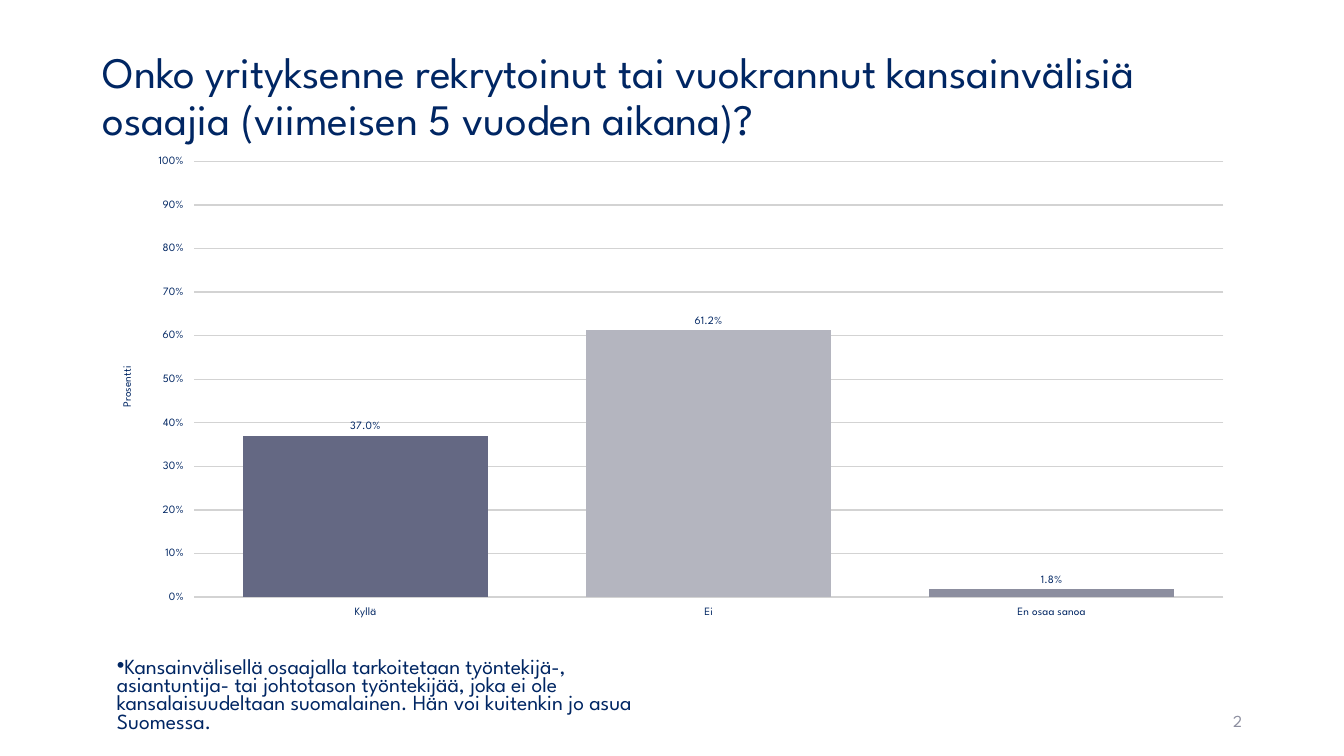
from dataclasses import dataclass

from lxml import etree
from pptx import Presentation
from pptx.chart.data import CategoryChartData
from pptx.dml.color import RGBColor
from pptx.enum.chart import XL_CHART_TYPE, XL_LABEL_POSITION, XL_TICK_MARK
from pptx.enum.text import MSO_ANCHOR, MSO_AUTO_SIZE, PP_ALIGN
from pptx.oxml.ns import qn
from pptx.util import Inches, Pt

COLUMNS = XL_CHART_TYPE.COLUMN_CLUSTERED
OUTSIDE_END = XL_LABEL_POSITION.OUTSIDE_END
TICK_OUT = XL_TICK_MARK.OUTSIDE
TOP, MIDDLE = MSO_ANCHOR.TOP, MSO_ANCHOR.MIDDLE
NO_AUTOFIT = MSO_AUTO_SIZE.NONE
LEFT, RIGHT = PP_ALIGN.LEFT, PP_ALIGN.RIGHT

QUESTION = "Onko yrityksenne rekrytoinut tai vuokrannut kansainvälisiä osaajia (viimeisen 5 vuoden aikana)?"
DEFINITION = (
    "Kansainvälisellä osaajalla tarkoitetaan työntekijä-, asiantuntija- tai johtotason "
    "työntekijää, joka ei ole kansalaisuudeltaan suomalainen. Hän voi kuitenkin jo asua Suomessa."
)
PAGE_NUMBER = "2"
AXIS_TITLE = "Prosentti"
ANSWERS = [
    ("Kyllä", 0.37, "646883"),
    ("Ei", 0.612, "B4B5BF"),
    ("En osaa sanoa", 0.018, "8C8E9F"),
]
PLOT_AREA = {"x": 0.078, "y": 0.013, "w": 0.922, "h": 0.914}


@dataclass(frozen=True)
class Theme:
    face: str = "League Spartan"
    ink: str = "002663"
    muted: str = "8C8E9F"
    grid: str = "D3D3D3"
    title: float = 31
    body: float = 15.4
    number: float = 12
    chart: float = 18
    label: float = 8


THEME = Theme()


def style(font, size, color=THEME.ink):
    font.name = THEME.face
    font.size = Pt(size)
    font.bold = False
    font.color.rgb = RGBColor.from_string(color)


def place(shape, left, top, width, height):
    shape.left, shape.top = Inches(left), Inches(top)
    shape.width, shape.height = Inches(width), Inches(height)


def write(shape, text, anchor, align):
    frame = shape.text_frame
    frame.word_wrap = True
    frame.auto_size = NO_AUTOFIT
    frame.vertical_anchor = anchor
    frame.text = text
    paragraph = frame.paragraphs[0]
    paragraph.alignment = align
    return paragraph


def add_bullet(paragraph, indent):
    properties = paragraph._p.get_or_add_pPr()
    properties.set("marL", "0")
    properties.set("indent", str(Inches(indent)))
    etree.SubElement(properties, qn("a:buFont")).set("typeface", "Arial")
    etree.SubElement(properties, qn("a:buChar")).set("char", "•")


def set_plot_area(chart):
    plot_area = chart._chartSpace.chart.plotArea
    for previous in plot_area.findall(qn("c:layout")):
        plot_area.remove(previous)
    layout = etree.Element(qn("c:layout"))
    manual = etree.SubElement(layout, qn("c:manualLayout"))
    settings = {"layoutTarget": "inner", "xMode": "edge", "yMode": "edge", **PLOT_AREA}
    for name, value in settings.items():
        etree.SubElement(manual, qn(f"c:{name}")).set("val", str(value))
    plot_area.insert(0, layout)


def add_answer_chart(slide):
    data = CategoryChartData(number_format="0.0%")
    data.categories = [answer for answer, _, _ in ANSWERS]
    data.add_series("Series 1", [share for _, share, _ in ANSWERS])
    chart = slide.shapes.add_chart(
        COLUMNS, Inches(1.06), Inches(1.54), Inches(11.08), Inches(4.73), data
    ).chart
    chart.has_legend = False
    chart.has_title = False
    style(chart.font, THEME.chart)

    for axis in (chart.category_axis, chart.value_axis):
        axis.major_tick_mark = TICK_OUT
        axis.format.line.fill.background()
        style(axis.tick_labels.font, THEME.label)

    shares = chart.value_axis
    shares.minimum_scale, shares.maximum_scale, shares.major_unit = 0, 1, 0.1
    shares.tick_labels.number_format = "0%"
    shares.tick_labels.number_format_is_linked = False
    shares.major_gridlines.format.line.color.rgb = RGBColor.from_string(THEME.grid)
    shares.major_gridlines.format.line.width = Pt(1)
    caption = shares.axis_title.text_frame
    caption.text = AXIS_TITLE
    caption._txBody.bodyPr.set("rot", "-5400000")
    caption._txBody.bodyPr.set("vert", "horz")
    style(caption.paragraphs[0].font, THEME.label)

    plot = chart.plots[0]
    plot.gap_width, plot.overlap = 40, -2
    plot.vary_by_categories = False
    series = plot.series[0]
    for index, (_, _, color) in enumerate(ANSWERS):
        fill = series.points[index].format.fill
        fill.solid()
        fill.fore_color.rgb = RGBColor.from_string(color)
    labels = series.data_labels
    labels.show_value = True
    labels.number_format = "0.0%"
    labels.number_format_is_linked = False
    labels.position = OUTSIDE_END
    style(labels.font, THEME.label)
    set_plot_area(chart)


def main():
    presentation = Presentation()
    presentation.slide_width, presentation.slide_height = Inches(13.33), Inches(7.5)
    slide = presentation.slides.add_slide(presentation.slide_layouts[1])

    title = slide.shapes.title
    place(title, 0.92, 0.4, 11.5, 1.14)
    question = write(title, QUESTION, MIDDLE, LEFT)
    question.line_spacing = 0.9
    style(question.font, THEME.title)

    body = slide.placeholders[1]
    place(body, 1.06, 6.5, 5.49, 0.9)
    definition = write(body, DEFINITION, TOP, LEFT)
    definition.line_spacing = 0.7
    definition.space_before = Pt(0)
    add_bullet(definition, -0.25)
    style(definition.font, THEME.body)

    number_box = slide.shapes.add_textbox(Inches(9.42), Inches(6.95), Inches(3), Inches(0.4))
    number = write(number_box, PAGE_NUMBER, MIDDLE, RIGHT)
    number.space_after = Pt(6)
    style(number.font, THEME.number, THEME.muted)

    add_answer_chart(slide)
    presentation.save("out.pptx")


if __name__ == "__main__":
    main()
